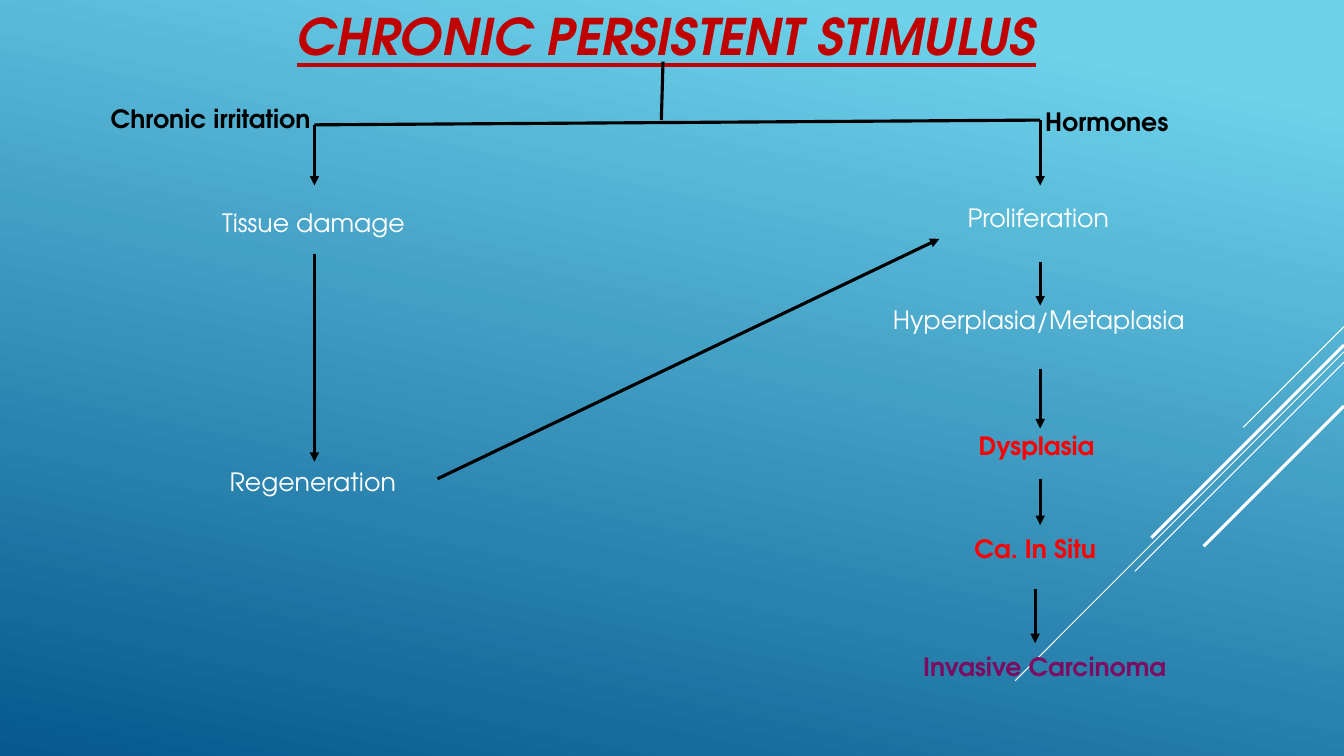
from lxml import etree
from pptx import Presentation
from pptx.dml.color import RGBColor
from pptx.enum.shapes import MSO_CONNECTOR
from pptx.enum.text import MSO_ANCHOR, MSO_AUTO_SIZE, PP_ALIGN
from pptx.oxml.ns import qn
from pptx.util import Pt

FONT = "TeX Gyre Adventor"
WHITE = RGBColor(0xFF, 0xFF, 0xFF)
BLACK = RGBColor(0x00, 0x00, 0x00)
RED = RGBColor(0xFF, 0x00, 0x00)
DARK_RED = RGBColor(0xC0, 0x00, 0x00)
PURPLE = RGBColor(0x7C, 0x0B, 0x61)
SKY = RGBColor(0x6E, 0xD2, 0xEB)
DEEP_BLUE = RGBColor(0x06, 0x58, 0x8E)

SLIDE_WIDTH = 960
LEFT_X = 224.6
RIGHT_X = 743


def add_line(start, end, color=BLACK, width=2.25, arrow=False):
    connector = slide.shapes.add_connector(
        MSO_CONNECTOR.STRAIGHT, *(Pt(value) for value in (*start, *end)))
    connector.line.color.rgb = color
    connector.line.width = Pt(width)
    if arrow:
        line = connector.line._get_or_add_ln()
        etree.SubElement(line, qn("a:tailEnd"), type="triangle")
    properties = connector.line._get_or_add_ln().getparent()
    etree.SubElement(properties, qn("a:effectLst"))
    return connector


def format_text(paragraph, size, color, bold):
    font = paragraph.runs[0].font
    font.name = FONT
    font.size = Pt(size)
    font.color.rgb = color
    font.bold = bold
    return font


presentation = Presentation()
presentation.slide_width = Pt(SLIDE_WIDTH)
presentation.slide_height = Pt(540)
slide = presentation.slides.add_slide(presentation.slide_layouts[5])

background = slide.background.fill
background.gradient()
background.gradient_angle = 258
for stop, position, color in zip(background.gradient_stops, (0.1, 1), (SKY, DEEP_BLUE)):
    stop.position = position
    stop.color.rgb = color

for top, run, width in [(233.3, 72, 0.75), (251.3, 234.9, 0.75), (258.7, 149.4, 0.75),
                        (246.5, 137.6, 2.25), (290, 100.2, 2.25)]:
    add_line((SLIDE_WIDTH, top), (SLIDE_WIDTH - run, top + run), WHITE, width)

title = slide.shapes.title
title.left, title.top, title.width, title.height = Pt(10), Pt(0), Pt(932), Pt(456.5)
title_frame = title.text_frame
title_frame.text = "CHRONIC PERSISTENT STIMULUS"
title_frame.word_wrap = True
title_frame.auto_size = MSO_AUTO_SIZE.NONE
title_frame.vertical_anchor = MSO_ANCHOR.TOP
title_frame.paragraphs[0].alignment = PP_ALIGN.CENTER
title_font = format_text(title_frame.paragraphs[0], 36, DARK_RED, True)
title_font.italic = True
title_font.underline = True

labels = {}
for text, left, top, width, color, bold in [
    ("Chronic irritation", 72, 70.5, 159.1, BLACK, True),
    ("Hormones", 739.4, 72.7, 103, BLACK, True),
    ("Tissue damage", 151.6, 144.8, 174.2, WHITE, False),
    ("Regeneration", 157, 329.8, 135.2, WHITE, False),
    ("Proliferation", 684, 141.2, 118, WHITE, False),
    ("Hyperplasia/Metaplasia", 630.7, 214, 224.6, WHITE, False),
    ("Dysplasia", 692, 304, 98.6, RED, True),
    ("Ca. In Situ", 689, 377.4, 102.2, RED, True),
    ("Invasive Carcinoma", 652.3, 461.6, 190, PURPLE, True),
]:
    label = slide.shapes.add_textbox(Pt(left), Pt(top), Pt(width), Pt(29))
    label.text_frame.text = text
    label.text_frame.word_wrap = False
    label.text_frame.auto_size = MSO_AUTO_SIZE.SHAPE_TO_FIT_TEXT
    format_text(label.text_frame.paragraphs[0], 18, color, bold)
    labels[text] = label

add_line((473.6, 44), (472.4, 85.8))
add_line((LEFT_X, 89.2), (RIGHT_X, 85.8))

for x, top, bottom in [(LEFT_X, 89.2, 132.5), (RIGHT_X, 85.8, 132.5),
                       (RIGHT_X, 187.2, 218.2), (RIGHT_X, 263.5, 306),
                       (RIGHT_X, 342, 375.1), (739.4, 420.5, 459.4)]:
    add_line((x, top), (x, bottom), arrow=True)

regeneration_arrow = add_line((LEFT_X, 181.4), (LEFT_X, 329.8), arrow=True)
regeneration_arrow.end_connect(labels["Regeneration"], 0)
add_line((312.5, 342), (671, 170.6), arrow=True)

presentation.save("out.pptx")
